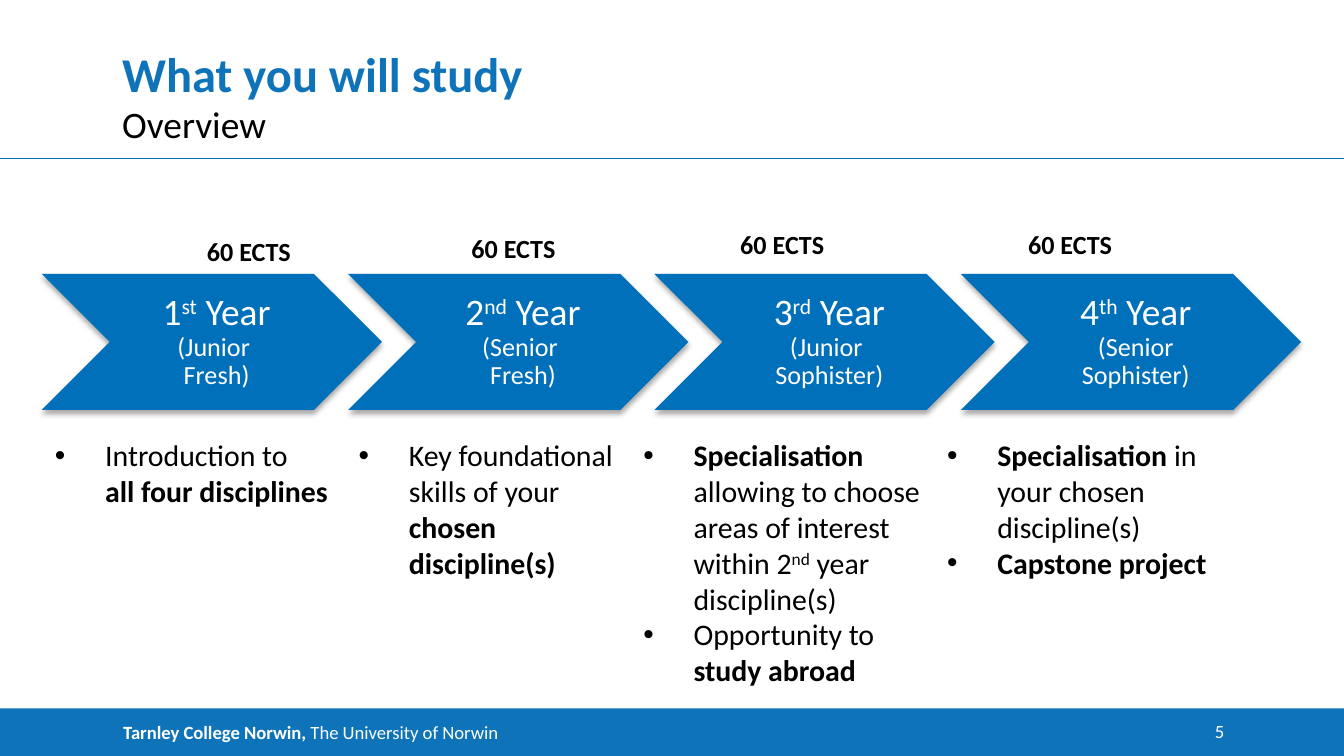
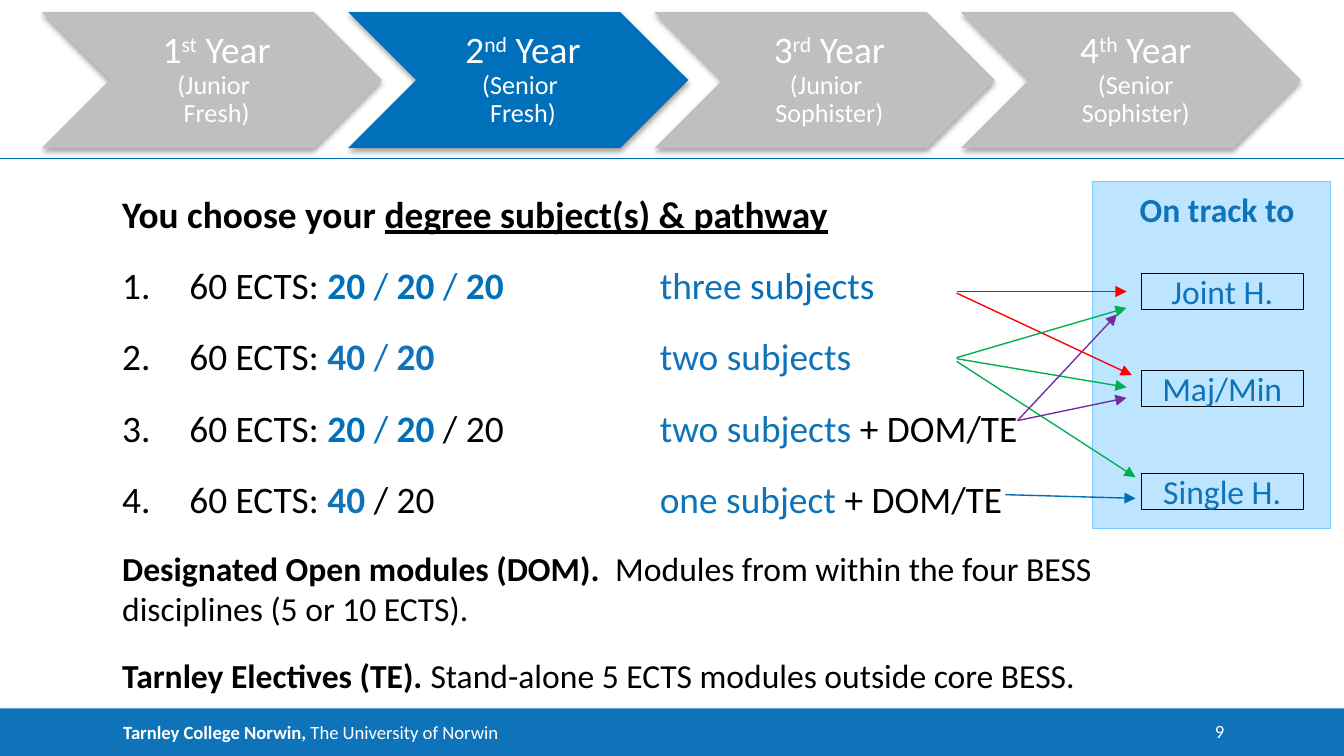
from dataclasses import dataclass
from typing import Optional

from lxml.etree import SubElement
from pptx import Presentation
from pptx.dml.color import RGBColor
from pptx.enum.shapes import MSO_CONNECTOR, MSO_SHAPE
from pptx.enum.text import MSO_ANCHOR, PP_ALIGN
from pptx.oxml.ns import qn
from pptx.util import Cm, Pt


@dataclass(frozen=True)
class Theme:
    font: str = "Calibri"
    band: RGBColor = RGBColor(0x0E, 0x73, 0xB9)
    blue: RGBColor = RGBColor(0x00, 0x70, 0xBB)
    black: RGBColor = RGBColor(0, 0, 0)
    white: RGBColor = RGBColor(255, 255, 255)
    muted: RGBColor = RGBColor(0xBF, 0xBF, 0xBF)
    panel: RGBColor = RGBColor(0xBE, 0xE5, 0xFF)
    panel_edge: RGBColor = RGBColor(0x7E, 0xCB, 0xFF)
    red: RGBColor = RGBColor(0xFF, 0, 0)
    green: RGBColor = RGBColor(0, 0xB0, 0x50)
    purple: RGBColor = RGBColor(0x70, 0x30, 0xA0)
    link: RGBColor = RGBColor(0x00, 0x6E, 0xB7)
    title: float = 26
    large: float = 20
    medium: float = 18
    bullet: float = 16
    small: float = 14
    footer: float = 10
    gap: float = 14.2
    tab: float = 2.54


THEME = Theme()


@dataclass(frozen=True)
class Span:
    text: str
    bold: Optional[bool] = None
    color: Optional[RGBColor] = None
    size: Optional[float] = None
    raised: bool = False
    underline: Optional[bool] = None


@dataclass(frozen=True)
class Para:
    spans: tuple[Span, ...]
    size: float
    color: RGBColor = THEME.black
    bold: Optional[bool] = None
    align: PP_ALIGN = PP_ALIGN.LEFT
    before: float = 0
    leading: Optional[float] = None
    margin: float = 0
    hanging: float = 0
    marker: str = ""


@dataclass(frozen=True)
class Area:
    left: float
    top: float
    width: float
    height: float

    def lengths(self) -> tuple:
        return Cm(self.left), Cm(self.top), Cm(self.width), Cm(self.height)


@dataclass(frozen=True)
class Year:
    number: str
    suffix: str
    stage: str


@dataclass(frozen=True)
class Column:
    left: float
    height: float
    points: tuple[tuple[Span, ...], ...]
    credit_left: float
    credit_top: float


@dataclass(frozen=True)
class Arrow:
    x1: float
    y1: float
    x2: float
    y2: float
    color: RGBColor


NO_INSETS = (0, 0, 0, 0)
BOX_INSETS = (0.25, 0.13, 0.25, 0.13)
YEARS = (
    Year("1", "st", "(Junior \nFresh)"),
    Year("2", "nd", "(Senior \nFresh)"),
    Year("3", "rd", "(Junior \nSophister)"),
    Year("4", "th", "(Senior Sophister)"),
)
COLUMNS = (
    Column(0.79, 1.63, ((Span("Introduction to \n"), Span("all four disciplines", True)),), 3.66, 4.32),
    Column(6.53, 3, ((Span("Key foundational skills of your "), Span("chosen discipline(s)", True)),), 8.66, 4.27),
    Column(11.91, 5.05, (
        (Span("Specialisation", True), Span(" allowing to choose areas of interest within 2"),
         Span("nd", raised=True), Span(" year discipline(s)")),
        (Span("Opportunity to "), Span("study abroad", True)),
    ), 13.74, 4.19),
    Column(17.65, 3, (
        (Span("Specialisation", True), Span(" in your chosen discipline(s)")),
        (Span("Capstone project", True),),
    ), 19.18, 4.19),
)
PATHWAYS = (
    (Span("20 ", True, THEME.blue), Span("/ ", color=THEME.blue), Span("20 ", True, THEME.blue),
     Span("/ ", color=THEME.blue), Span("20 \t\t", True, THEME.blue),
     Span("three ", color=THEME.band), Span("subjects", color=THEME.blue)),
    (Span("40", True, THEME.band), Span(" / ", color=THEME.band), Span("20", True, THEME.band),
     Span(" \t\ttwo subjects", color=THEME.band)),
    (Span("20 ", True, THEME.blue), Span("/", color=THEME.blue), Span(" 20", True, THEME.blue),
     Span(" / 20\t\t"), Span("two subjects", color=THEME.band), Span(" + DOM/TE")),
    (Span("40", True, THEME.band), Span(" / 20 \t\t"),
     Span("one subject ", color=THEME.band), Span("+ DOM/TE")),
)
NOTES = (
    ("Designated Open modules (DOM).  ", "Modules from within the four BESS disciplines (5 or 10 ECTS)."),
    ("Tarnley Electives (TE). ", "Stand-alone 5 ECTS modules outside core BESS."),
)
OUTCOMES = (("Joint H.", 5.16), ("Maj/Min", 6.99), ("Single H.", 8.94))
ARROWS = (
    Arrow(18.08, 5.51, 21.29, 5.51, THEME.red),
    Arrow(18.08, 5.54, 21.39, 7.09, THEME.red),
    Arrow(18.08, 6.76, 21.29, 5.82, THEME.green),
    Arrow(18.08, 6.78, 21.29, 7.32, THEME.green),
    Arrow(18.08, 6.83, 21.46, 9.02, THEME.green),
    Arrow(19.23, 7.95, 21.29, 7.52, THEME.purple),
    Arrow(19.23, 7.95, 21.11, 5.94, THEME.purple),
    Arrow(19, 9.35, 21.46, 9.42, THEME.link),
)


def format_para(para, style: Para) -> None:
    para.alignment = style.align
    para.space_before = Pt(style.before)
    if style.leading:
        para.line_spacing = style.leading
    properties = para._p.get_or_add_pPr()
    properties.set("marL", str(Cm(style.margin)))
    properties.set("indent", str(-Cm(style.hanging)))
    properties.set("defTabSz", str(Cm(THEME.tab)))
    if style.marker == "•":
        SubElement(properties, qn("a:buFont"), typeface="Arial")
        SubElement(properties, qn("a:buChar"), char=style.marker)
    elif style.marker:
        SubElement(properties, qn("a:buFont"), typeface="+mj-lt")
        SubElement(properties, qn("a:buAutoNum"), type=style.marker)
    para.font.name = THEME.font
    para.font.size = Pt(style.size)
    para.font.bold = style.bold
    para.font.color.rgb = style.color


def add_span(para, span: Span) -> None:
    for index, piece in enumerate(span.text.split("\n")):
        if index:
            para.add_line_break()
        if not piece:
            continue
        run = para.add_run()
        run.text = piece
        run.font.bold = span.bold
        run.font.underline = span.underline
        if span.size:
            run.font.size = Pt(span.size)
        if span.color is not None:
            run.font.color.rgb = span.color
        if span.raised:
            run.font._element.set("baseline", "30000")


def write(shape, paras: list[Para], insets: tuple = BOX_INSETS,
          anchor: MSO_ANCHOR = MSO_ANCHOR.TOP, wrap: bool = True) -> None:
    frame = shape.text_frame
    frame.word_wrap = wrap
    frame.vertical_anchor = anchor
    frame.margin_left, frame.margin_top, frame.margin_right, frame.margin_bottom = map(Cm, insets)
    for index, style in enumerate(paras):
        para = frame.add_paragraph() if index else frame.paragraphs[0]
        format_para(para, style)
        for span in style.spans:
            add_span(para, span)


def add_text(shapes, area: Area, paras: list[Para], insets: tuple = BOX_INSETS,
             anchor: MSO_ANCHOR = MSO_ANCHOR.TOP, wrap: bool = True) -> None:
    write(shapes.add_textbox(*area.lengths()), paras, insets, anchor, wrap)


def add_block(shapes, kind: MSO_SHAPE, area: Area, fill: Optional[RGBColor] = None,
              edge: Optional[RGBColor] = None):
    block = shapes.add_shape(kind, *area.lengths())
    block.shadow.inherit = False
    if fill is None:
        block.fill.background()
    else:
        block.fill.solid()
        block.fill.fore_color.rgb = fill
    if edge is None:
        block.line.fill.background()
    else:
        block.line.color.rgb = edge
        block.line.width = Pt(0.25)
    return block


def add_line(page, line: Arrow, head: bool = True) -> None:
    connector = page.shapes.add_connector(
        MSO_CONNECTOR.STRAIGHT, Cm(line.x1), Cm(line.y1), Cm(line.x2), Cm(line.y2))
    connector.line.color.rgb = line.color
    connector.line.width = Pt(0.75)
    if head:
        SubElement(connector.line._get_or_add_ln(), qn("a:tailEnd"), type="triangle")
    SubElement(connector._element.spPr, qn("a:effectLst"))


def add_page(deck, number: int):
    page = deck.slides.add_slide(deck.slide_layouts[6])
    band = add_block(page.shapes, MSO_SHAPE.RECTANGLE, Area(0, 13.39, 25.4, 0.9), THEME.band)
    footer = (Span("Tarnley College Norwin, ", True), Span("The University of Norwin"))
    write(band, [Para(footer, THEME.footer, THEME.white, margin=2.03)], (0.3, 0, 0, 0), MSO_ANCHOR.MIDDLE)
    add_line(page, Arrow(0, 3, 25.4, 3, THEME.blue), head=False)
    add_text(page.shapes, Area(22.1, 13.61, 1.04, 0.43),
             [Para((Span(str(number)),), THEME.footer, THEME.white, align=PP_ALIGN.RIGHT)], NO_INSETS)
    return page


def add_shadow(shape) -> None:
    effects = shape._element.spPr.find(qn("a:effectLst"))
    shadow = SubElement(effects, qn("a:outerShdw"), blurRad=str(Pt(3.1)), dist=str(Pt(1.8)),
                        dir="5400000", rotWithShape="0")
    color = SubElement(shadow, qn("a:srgbClr"), val=str(THEME.black))
    SubElement(color, qn("a:alpha"), val="35000")


def add_years(page, top: float, active: tuple[int, ...]) -> None:
    shapes = page.shapes.add_group_shape().shapes
    for index, year in enumerate(YEARS):
        left = 0.79 + 5.79 * index
        fill = THEME.blue if index in active else THEME.muted
        add_shadow(add_block(shapes, MSO_SHAPE.CHEVRON, Area(left, top, 6.43, 2.57), fill))
        spans = (Span(year.number), Span(year.suffix, raised=True), Span(" Year\n"),
                 Span(year.stage, size=THEME.small))
        label = Para(spans, THEME.large, THEME.white, align=PP_ALIGN.CENTER, leading=0.9)
        add_text(shapes, Area(left + 1.3, top, 3.86, 2.57), [label],
                 (0.23, 0.08, 0.08, 0.08), MSO_ANCHOR.MIDDLE)


def build_overview(deck) -> None:
    page = add_page(deck, 5)
    add_text(page.shapes, Area(2.31, 0.76, 20.83, 1.17),
             [Para((Span("What you will study"),), THEME.title, THEME.band, True)],
             NO_INSETS, MSO_ANCHOR.BOTTOM)
    add_text(page.shapes, Area(2.31, 1.91, 20.83, 0.58),
             [Para((Span("Overview"),), THEME.large, before=THEME.gap)], NO_INSETS)
    add_years(page, 5.18, (0, 1, 2, 3))
    for column in COLUMNS:
        add_text(page.shapes, Area(column.left, 8.13, 5.77, column.height),
                 [Para(spans, THEME.bullet, margin=0.95, hanging=0.95, marker="•")
                  for spans in column.points])
        add_text(page.shapes, Area(column.credit_left, column.credit_top, 2.11, 0.86),
                 [Para((Span("60 ECTS"),), THEME.small, bold=True)], wrap=False)


def build_second_year(deck) -> None:
    page = add_page(deck, 9)
    add_block(page.shapes, MSO_SHAPE.RECTANGLE, Area(20.65, 3.43, 4.5, 6.55), THEME.panel, THEME.panel_edge)
    heading = (Span("You choose your "), Span("degree subject(s) & pathway", underline=True))
    paras = [Para(heading, THEME.large, bold=True, before=THEME.gap)]
    paras += [Para((Span("60 ECTS: "), *spans), THEME.large, before=THEME.gap,
                   margin=1.27, hanging=1.27, marker="arabicPeriod") for spans in PATHWAYS]
    paras += [Para((Span(term, True), Span(meaning)), THEME.medium, before=THEME.gap)
              for term, meaning in NOTES]
    add_text(page.shapes, Area(2.31, 3.61, 20.83, 8.41), paras, NO_INSETS)
    add_years(page, 0.23, (1,))
    for name, top in OUTCOMES:
        outcome = add_block(page.shapes, MSO_SHAPE.RECTANGLE, Area(21.56, top, 3.08, 0.69), edge=THEME.black)
        write(outcome, [Para((Span(name),), THEME.medium, THEME.band, align=PP_ALIGN.CENTER)],
              anchor=MSO_ANCHOR.MIDDLE)
    add_text(page.shapes, Area(21.29, 3.45, 3.43, 1.02),
             [Para((Span("On track to"),), THEME.medium, THEME.band, True)])
    for arrow in ARROWS:
        add_line(page, arrow)


def main() -> None:
    """Build the two study pages and save the deck."""
    deck = Presentation()
    deck.slide_width, deck.slide_height = Cm(25.4), Cm(14.29)
    build_overview(deck)
    build_second_year(deck)
    deck.save("out.pptx")


if __name__ == "__main__":
    main()
